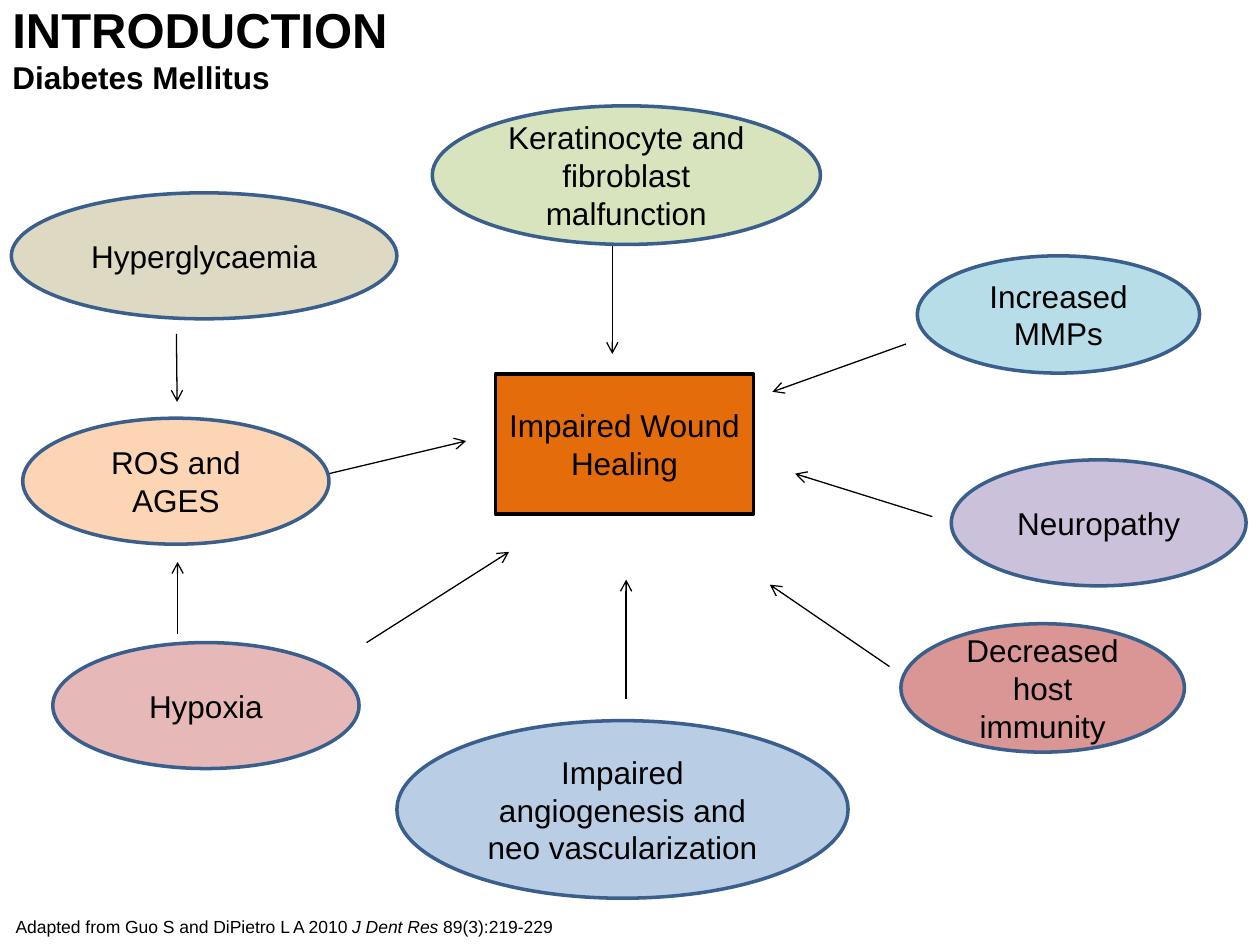
from lxml import etree
from pptx import Presentation
from pptx.dml.color import RGBColor
from pptx.enum.shapes import MSO_CONNECTOR, MSO_SHAPE
from pptx.enum.text import MSO_ANCHOR, PP_ALIGN
from pptx.oxml.ns import qn
from pptx.util import Pt

OVAL, RECT = MSO_SHAPE.OVAL, MSO_SHAPE.RECTANGLE
STRAIGHT = MSO_CONNECTOR.STRAIGHT
MIDDLE = MSO_ANCHOR.MIDDLE
LEFT, CENTER = PP_ALIGN.LEFT, PP_ALIGN.CENTER

COLORS = {
    "black": "000000", "outline": "3A5F8C", "tan": "DDD9C3",
    "peach": "FCD5B5", "orange": "E46C0A", "pink": "E6B9B8",
    "blue": "B9CDE5", "red": "D99694", "purple": "CCC1DA",
    "aqua": "B7DEE8", "green": "D7E4BD",
}
FRAME_FORMAT = {"word_wrap": True, "vertical_anchor": MIDDLE}


def color(name):
    return RGBColor.from_string(COLORS[name])


def write(shape, align, runs):
    """Fill a shape with one paragraph; "\\v" as run text is a line break."""
    for attribute, value in FRAME_FORMAT.items():
        setattr(shape.text_frame, attribute, value)
    paragraph = shape.text_frame.paragraphs[0]
    paragraph.alignment = align
    for text, font_format in runs:
        if text == "\v":
            paragraph.add_line_break()
            continue
        run = paragraph.add_run()
        run.text = text
        run.font.color.rgb = color("black")
        for attribute, value in {"name": "Arial", **font_format}.items():
            setattr(run.font, attribute, value)


presentation = Presentation()
presentation.slide_width, presentation.slide_height = Pt(720), Pt(540)
slide = presentation.slides.add_slide(presentation.slide_layouts[6])
shapes = slide.shapes

# Heading
heading = shapes.add_textbox(Pt(0), Pt(0.7), Pt(721.4), Pt(53.3))
write(heading, LEFT, [
    ("INTRODUCTION", {"size": Pt(28), "bold": True}),
    ("\v", {}),
    ("Diabetes Mellitus", {"size": Pt(18), "bold": True}),
])

# Arrows: start x, y and end x, y
arrows = [
    (101.5, 362.2, 101.5, 321.1),  # hypoxia to ROS
    (357.8, 399.6, 357.8, 331.2),  # angiogenesis to wound healing
    (508.3, 380.9, 439.9, 334.1),  # host immunity to wound healing
    (532.8, 295.2, 454.3, 270.7),  # neuropathy to wound healing
    (517.7, 196.6, 441.4, 223.9),  # MMPs to wound healing
    (349.9, 136.8, 349.9, 202.3),  # keratinocytes to wound healing
    (187.9, 270.7, 266.4, 252),    # ROS to wound healing
    (209.5, 367.2, 290.9, 315.4),  # hypoxia to wound healing
    (100.8, 190.8, 101.2, 229.7),  # hyperglycaemia to ROS
]
for ends in arrows:
    arrow = shapes.add_connector(STRAIGHT, *map(Pt, ends))
    arrow.line.color.rgb = color("black")
    arrow.line.width = Pt(0.75)
    etree.SubElement(arrow.line._get_or_add_ln(), qn("a:tailEnd"), type="arrow")
    etree.SubElement(arrow._element.spPr, qn("a:effectLst"))

# Causes and the central outcome: text, preset, fill, outline, box
factors = [
    ("Hyperglycaemia", OVAL, "tan", "outline", (6.5, 110.2, 220.3, 72)),
    ("ROS and AGES", OVAL, "peach", "outline", (13, 239, 175, 72)),
    ("Impaired Wound Healing", RECT, "orange", "black", (283, 213.8, 147.6, 80)),
    ("Hypoxia", OVAL, "pink", "outline", (30.2, 367.2, 175, 72)),
    ("Impaired angiogenesis and neo vascularization", OVAL, "blue", "outline",
     (226.8, 411.8, 257.8, 101.5)),
    ("Decreased host immunity", OVAL, "red", "outline", (514.8, 356.4, 162, 73.4)),
    ("Neuropathy", OVAL, "purple", "outline", (543.6, 262.8, 168.5, 72)),
    ("Increased MMPs", OVAL, "aqua", "outline", (524.2, 146.2, 161.3, 67)),
    ("Keratinocyte and fibroblast malfunction", OVAL, "green", "outline",
     (247, 60.5, 221.8, 79.2)),
]
for text, preset, fill, outline, box in factors:
    factor = shapes.add_shape(preset, *map(Pt, box))
    factor.shadow.inherit = False
    factor.fill.solid()
    factor.fill.fore_color.rgb = color(fill)
    factor.line.color.rgb = color(outline)
    factor.line.width = Pt(2)
    write(factor, CENTER, [(text, {"size": Pt(18)})])

# Citation
citation = shapes.add_textbox(Pt(-0.7), Pt(519.1), Pt(329), Pt(20.9))
write(citation, CENTER, [
    ("Adapted from Guo S and DiPietro L A 2010", {"size": Pt(10)}),
    (" J Dent Res ", {"size": Pt(10), "italic": True}),
    ("89(3):219-229 ", {"size": Pt(10)}),
])

presentation.save("out.pptx")
